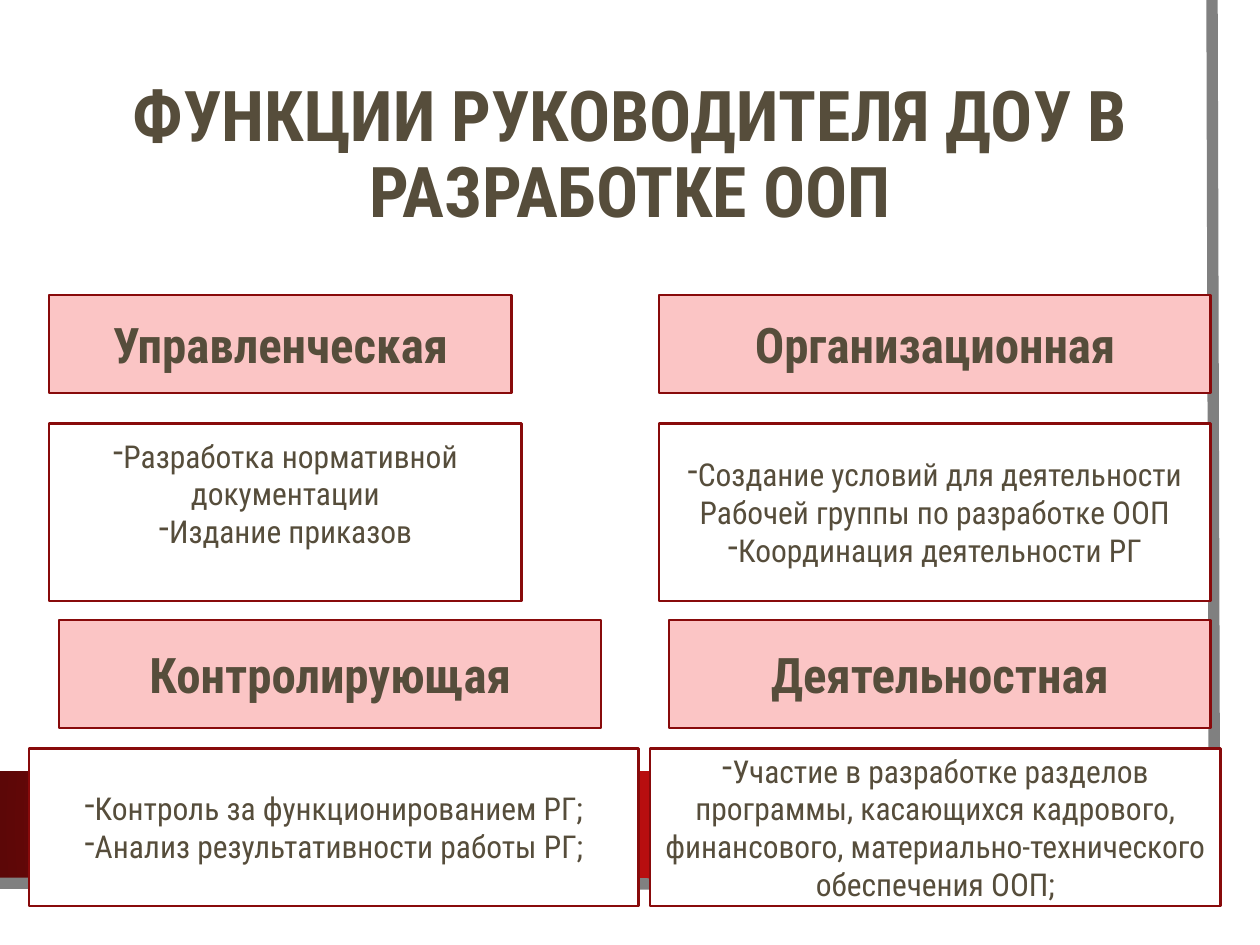
from dataclasses import dataclass

import pptx
import pptx.dml.color
import pptx.enum.shapes
import pptx.enum.text
import pptx.oxml
import pptx.oxml.ns
import pptx.util
from pptx.util import Inches


@dataclass(frozen=True)
class Theme:
    font: str = "Roboto Condensed"
    text: str = "564D3B"
    white: str = "FFFFFF"
    pink: str = "FBC5C5"
    border: str = "880A0B"
    band_center: str = "B80E0F"
    band_edge: str = "5C0707"
    frame: str = "808080"
    title_size: int = 40
    heading_size: int = 28
    body_size: int = 18
    border_width: float = 1.5
    frame_width: float = 6.5


THEME = Theme()

# Each function: heading, heading box, items, details box, extra bottom inset
FUNCTIONS = [
    ("Управленческая", (0.39, 2.34, 3.67, 0.78),
     ["Разработка нормативной документации", "Издание приказов"],
     (0.39, 3.36, 3.75, 1.41), 0.3),
    ("Контролирующая", (0.47, 4.92, 4.3, 0.86),
     ["Контроль за функционированием РГ;", "Анализ результативности работы РГ;"],
     (0.23, 5.94, 4.84, 1.25), 0),
    ("Организационная", (5.23, 2.34, 4.38, 0.78),
     ["Создание условий для деятельности Рабочей группы по разработке ООП",
      "Координация деятельности РГ"],
     (5.23, 3.36, 4.38, 1.41), 0),
    ("Деятельностная", (5.31, 4.92, 4.3, 0.86),
     ["Участие в разработке разделов программы, касающихся кадрового, "
      "финансового, материально-технического обеспечения ООП;"],
     (5.16, 5.94, 4.53, 1.25), 0),
]


def rgb(value):
    return pptx.dml.color.RGBColor.from_string(value)


def add_rectangle(slide, box, fill, line=None):
    shape = slide.shapes.add_shape(
        pptx.enum.shapes.MSO_SHAPE.RECTANGLE, *(Inches(value) for value in box))
    shape.shadow.inherit = False
    shape.fill.solid()
    shape.fill.fore_color.rgb = rgb(fill)
    if line:
        shape.line.color.rgb = rgb(line)
        shape.line.width = pptx.util.Pt(THEME.border_width)
    else:
        shape.line.fill.background()
    return shape


def write_run(paragraph, text, size, bold=False):
    paragraph.alignment = pptx.enum.text.PP_ALIGN.CENTER
    run = paragraph.add_run()
    run.text = text
    run.font.name = THEME.font
    run.font.size = pptx.util.Pt(size)
    run.font.bold = bold
    run.font.color.rgb = rgb(THEME.text)


def add_dash_bullet(paragraph):
    properties = paragraph._p.get_or_add_pPr()
    properties.set("marL", "0")
    properties.set("indent", "0")
    bullet = pptx.oxml.parse_xml(
        f'<a:buChar {pptx.oxml.ns.nsdecls("a")} char="-"/>')
    properties.append(bullet)


def add_backdrop(slide):
    add_rectangle(slide, (0, 0, 9.83, 7.27), THEME.white)

    # Red band, lighter in its centre
    band = add_rectangle(slide, (0, 6.12, 9.6, 0.85), THEME.band_center)
    band.fill.gradient()
    stops = [(0.34, THEME.band_center), (1, THEME.band_edge)]
    for stop, (position, color) in zip(band.fill.gradient_stops, stops):
        stop.position = position
        stop.color.rgb = rgb(color)
    linear = band.element.spPr.find(".//" + pptx.oxml.ns.qn("a:lin"))
    radial = pptx.oxml.parse_xml(
        f'<a:path {pptx.oxml.ns.nsdecls("a")} path="circle">'
        '<a:fillToRect l="50000" t="50000" r="50000" b="50000"/></a:path>')
    linear.getparent().replace(linear, radial)

    # Grey frame along the right and bottom edges
    builder = slide.shapes.build_freeform(Inches(9.62), Inches(0))
    builder.add_line_segments(
        [(Inches(9.64), Inches(7.02)), (Inches(-0.02), Inches(7.01))], close=False)
    frame = builder.convert_to_shape()
    frame.shadow.inherit = False
    frame.fill.background()
    frame.line.color.rgb = rgb(THEME.frame)
    frame.line.width = pptx.util.Pt(THEME.frame_width)


def set_title(slide, text):
    title = slide.shapes.title
    slide.shapes.element.append(title.element)  # in front of the backdrop
    title.left, title.top = Inches(0.5), Inches(0.47)
    title.width, title.height = Inches(9), Inches(1.55)
    frame = title.text_frame
    frame.vertical_anchor = pptx.enum.text.MSO_ANCHOR.MIDDLE
    frame.paragraphs[0].line_spacing = 0.9
    write_run(frame.paragraphs[0], text, THEME.title_size, bold=True)


def add_heading(slide, text, box):
    shape = add_rectangle(slide, box, THEME.pink, THEME.border)
    write_run(shape.text_frame.paragraphs[0], text, THEME.heading_size, bold=True)


def add_details(slide, items, box, extra_bottom):
    shape = add_rectangle(slide, box, THEME.white, THEME.border)
    frame = shape.text_frame
    frame.margin_bottom = Inches(0.05 + extra_bottom)
    for index, item in enumerate(items):
        paragraph = frame.add_paragraph() if index else frame.paragraphs[0]
        add_dash_bullet(paragraph)
        write_run(paragraph, item, THEME.body_size)


def main():
    presentation = pptx.Presentation()
    presentation.slide_width = Inches(10)
    presentation.slide_height = Inches(7.5)
    slide = presentation.slides.add_slide(presentation.slide_layouts[5])

    add_backdrop(slide)
    set_title(slide, "ФУНКЦИИ РУКОВОДИТЕЛЯ ДОУ В РАЗРАБОТКЕ ООП")
    for heading, heading_box, items, details_box, extra_bottom in FUNCTIONS:
        add_heading(slide, heading, heading_box)
        add_details(slide, items, details_box, extra_bottom)

    presentation.save("out.pptx")


if __name__ == "__main__":
    main()
